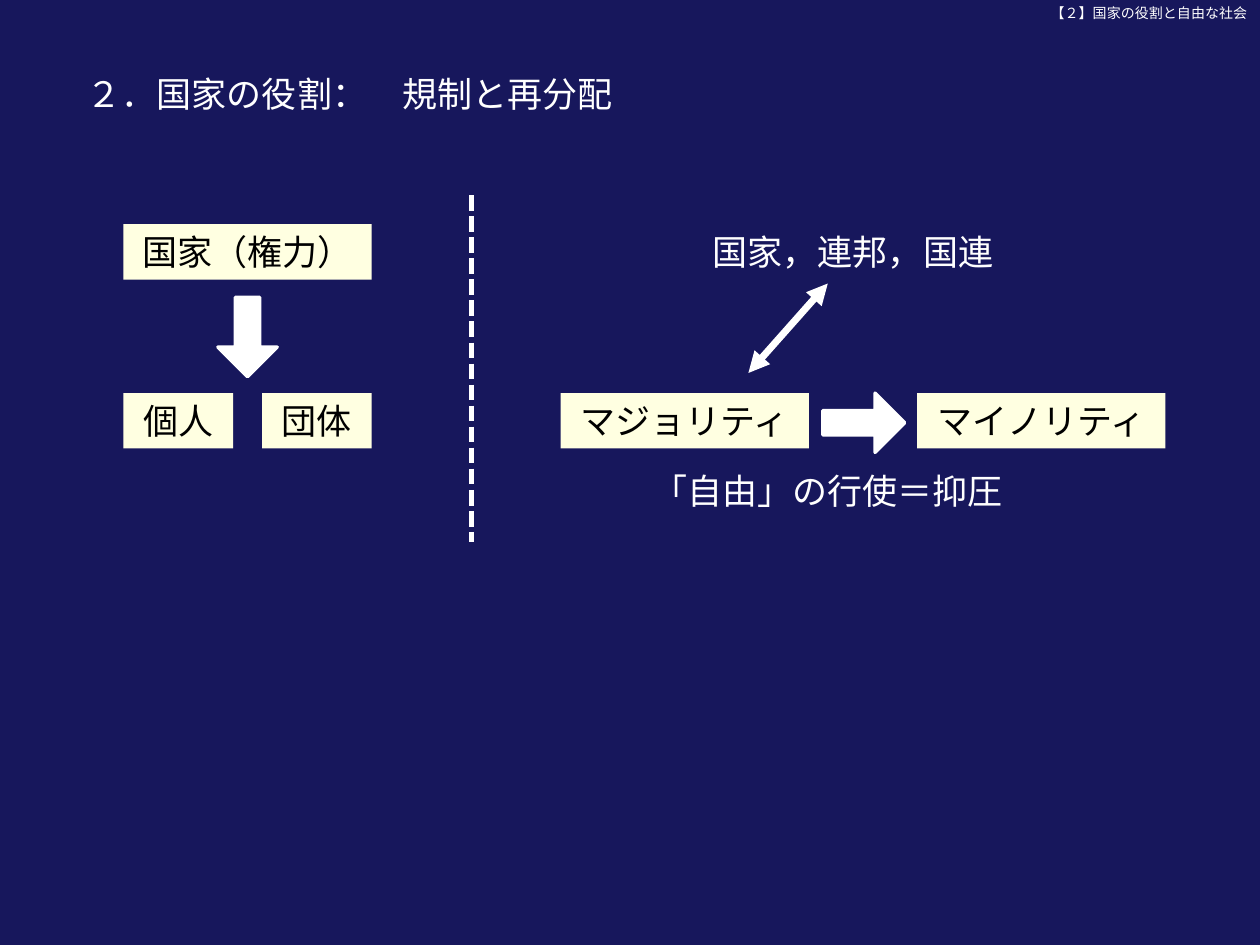
import pptx
import pptx.util
import pptx.dml.color
import pptx.enum.dml
import pptx.enum.shapes
import pptx.enum.text
import pptx.oxml.ns
import pptx.oxml.xmlchemy

COLORS = {"navy": "17175C", "cream": "FFFFE1", "white": "FFFFFF", "black": "000000"}
COLORS = {name: pptx.dml.color.RGBColor.from_string(value) for name, value in COLORS.items()}
ALIGN = pptx.enum.text.PP_ALIGN
SHAPES = pptx.enum.shapes.MSO_SHAPE

presentation = pptx.Presentation()
presentation.slide_width = pptx.util.Inches(10)
presentation.slide_height = pptx.util.Inches(7.5)
slide = presentation.slides.add_slide(presentation.slide_layouts[6])
slide.background.fill.solid()
slide.background.fill.fore_color.rgb = COLORS["navy"]

# Grid of 100 columns by 75 rows, so every cell is square
CELL = presentation.slide_width // 100
LABEL_HEIGHT = 4.4
WIDE, NARROW = 19.7, 8.7
TOP_ROW, BOTTOM_ROW = 17.8, 31.2
STATE_LEFT, MAJORITY_LEFT, MINORITY_LEFT = 9.8, 44.5, 72.8


def grid(*cells):
    return [round(cell * CELL) for cell in cells]


def add_label(text, left, top, width, height=LABEL_HEIGHT, size=20,
              align=ALIGN.CENTER, boxed=False):
    box = grid(left, top, width, height)
    if boxed:
        shape = slide.shapes.add_shape(SHAPES.RECTANGLE, *box)
        shape.shadow.inherit = False
        shape.fill.solid()
        shape.fill.fore_color.rgb = COLORS["cream"]
        shape.line.fill.background()
    else:
        shape = slide.shapes.add_textbox(*box)
    frame = shape.text_frame
    frame.word_wrap = True
    frame.vertical_anchor = pptx.enum.text.MSO_ANCHOR.MIDDLE
    frame.margin_top = frame.margin_bottom = 0
    frame.text = text
    paragraph = frame.paragraphs[0]
    paragraph.alignment = align
    paragraph.font.name = "Times New Roman"
    paragraph.font.size = pptx.util.Pt(size)
    paragraph.font.color.rgb = COLORS["black" if boxed else "white"]


# Running header and heading
add_label("【２】国家の役割と自由な社会", 0, 0, 100, 2.1, size=8, align=ALIGN.RIGHT)
add_label("２．国家の役割：　規制と再分配", 5.9, 5.2, 78, align=ALIGN.LEFT)

# Boxes: state over individuals and groups, majority beside minority
for text, left, top, width in (
    ("国家（権力）", STATE_LEFT, TOP_ROW, WIDE),
    ("個人", STATE_LEFT, BOTTOM_ROW, NARROW),
    ("団体", STATE_LEFT + WIDE - NARROW, BOTTOM_ROW, NARROW),
    ("マジョリティ", MAJORITY_LEFT, BOTTOM_ROW, WIDE),
    ("マイノリティ", MINORITY_LEFT, BOTTOM_ROW, WIDE),
):
    add_label(text, left, top, width, boxed=True)

# Captions on the right-hand side
add_label("国家，連邦，国連", 50, TOP_ROW, 35.4)
add_label("「自由」の行使＝抑圧", 50.8, 36.7, 31, align=ALIGN.LEFT)

# Block arrows: downwards from the state, sideways from the majority
for left, top, height, rotation in ((17.3, 23.6, 6.3, 0), (66.2, 30.3, 6.5, 270)):
    arrow = slide.shapes.add_shape(SHAPES.DOWN_ARROW, *grid(left, top, 4.7, height))
    arrow.shadow.inherit = False
    arrow.adjustments[0] = 0.41
    arrow.adjustments[1] = 0.5
    arrow.rotation = rotation
    arrow.fill.solid()
    arrow.fill.fore_color.rgb = COLORS["white"]
    arrow.line.color.rgb = COLORS["white"]
    arrow.line.width = pptx.util.Pt(2)

# Dashed divider and double-headed arrow
lines = []
for ends, width in (((37.4, 15.5, 37.4, 43), 3), ((59.4, 29.6, 65.7, 22.5), 4)):
    line = slide.shapes.add_connector(
        pptx.enum.shapes.MSO_CONNECTOR.STRAIGHT, *grid(*ends))
    line.line.color.rgb = COLORS["white"]
    line.line.width = pptx.util.Pt(width)
    properties = line._element.spPr
    properties.append(pptx.oxml.xmlchemy.OxmlElement("a:effectLst"))
    lines.append(line)

divider, exchange = lines
divider.line.dash_style = pptx.enum.dml.MSO_LINE.SQUARE_DOT
outline = exchange._element.spPr.find(pptx.oxml.ns.qn("a:ln"))
for tag in ("a:headEnd", "a:tailEnd"):
    end = pptx.oxml.xmlchemy.OxmlElement(tag)
    end.set("type", "triangle")
    outline.append(end)

presentation.save("out.pptx")
